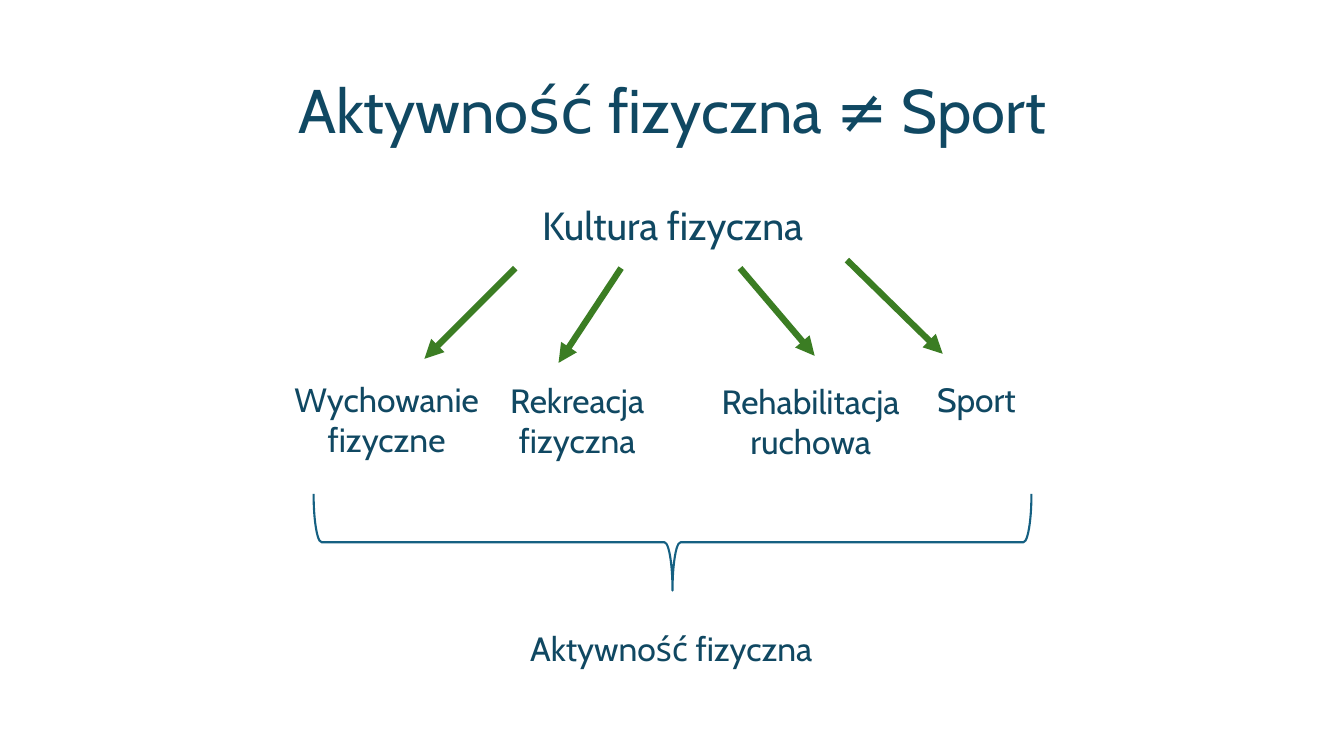
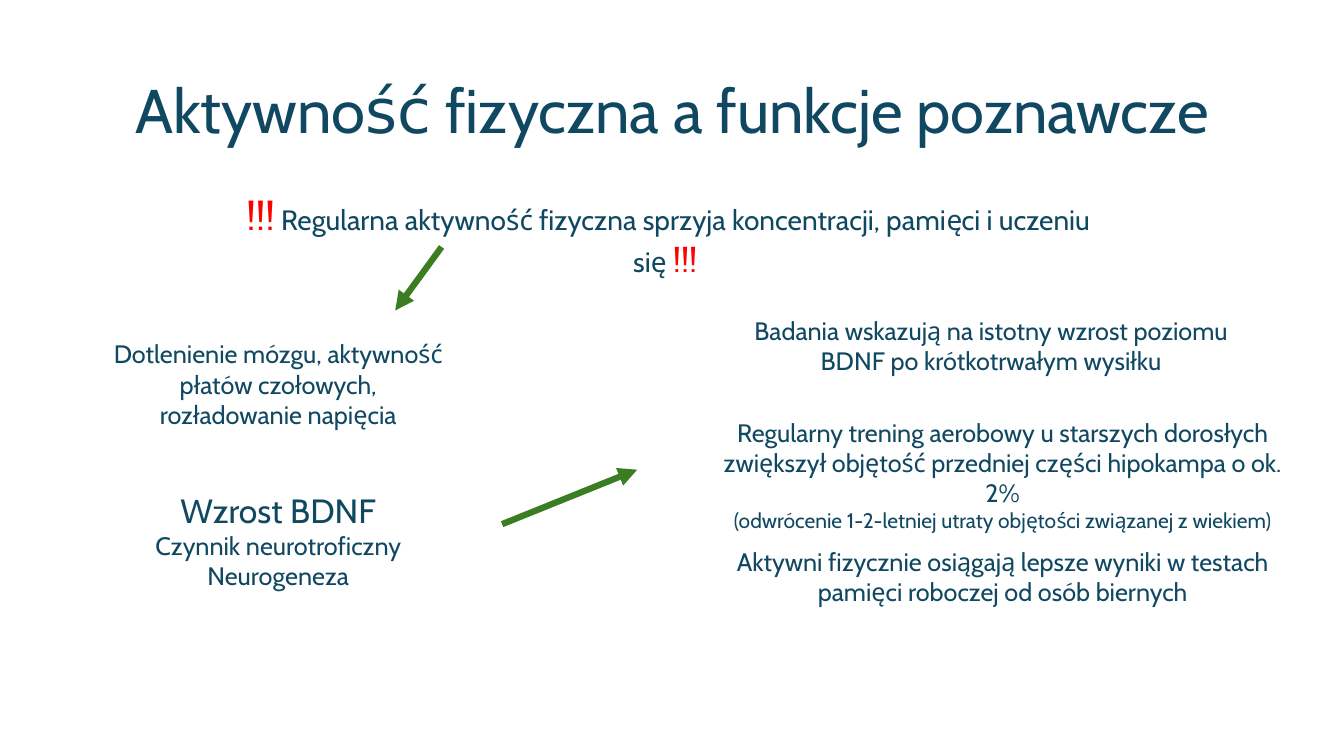
from lxml.etree import SubElement
from pptx import Presentation
from pptx.dml.color import RGBColor
from pptx.enum.shapes import MSO_CONNECTOR, MSO_SHAPE
from pptx.enum.text import MSO_ANCHOR, MSO_AUTO_SIZE, PP_ALIGN
from pptx.oxml.ns import qn
from pptx.util import Inches, Pt

COLORS = {"text": "104862", "arrow": "3B7D23", "brace": "156082", "alert": "FF0000"}
FONT = "Cabin"
TITLE_ONLY, TITLE_AND_BODY = 5, 1
FRAME = {"word_wrap": True, "auto_size": MSO_AUTO_SIZE.SHAPE_TO_FIT_TEXT}
HOLDER_FRAME = {"word_wrap": True, "auto_size": MSO_AUTO_SIZE.NONE}
CENTERED = {"alignment": PP_ALIGN.CENTER}
HOLDER_PARAGRAPH = {**CENTERED, "line_spacing": 0.9, "space_before": Pt(0)}


def set_all(target, values):
    """Set each attribute in values on target."""
    for name, value in values.items():
        setattr(target, name, value)


def color(name):
    """Return the named palette colour."""
    return RGBColor.from_string(COLORS[name])


class Deck:
    """Hold the shared style and the slide being built."""

    def __init__(self):
        """Start a widescreen presentation."""
        self.prs = Presentation()
        set_all(self.prs, {"slide_width": Inches(13.33), "slide_height": Inches(7.5)})
        self.slide = None

    def new_slide(self, layout, title):
        """Add a slide with a centred title."""
        self.slide = self.prs.slides.add_slide(self.prs.slide_layouts[layout])
        self.fill_holder(self.slide.shapes.title, (0.92, 0.4, 11.5, 1.45), title, 44,
                         MSO_ANCHOR.MIDDLE)

    def body(self, text):
        """Fill the body placeholder with one line without a bullet."""
        holder = self.slide.placeholders[1]
        self.fill_holder(holder, (0.92, 2, 11.5, 5.24), text, 28, MSO_ANCHOR.TOP)
        properties = holder.text_frame.paragraphs[0]._p.get_or_add_pPr()
        properties.set("marL", "0")
        properties.set("indent", "0")
        SubElement(properties, qn("a:buNone"))

    def fill_holder(self, holder, box, text, size, anchor):
        """Move a placeholder and fill in its text."""
        set_all(holder, dict(zip(("left", "top", "width", "height"), map(Inches, box))))
        set_all(holder.text_frame, {**HOLDER_FRAME, "vertical_anchor": anchor})
        self.add_runs(holder.text_frame.paragraphs[0], [(text, size)], HOLDER_PARAGRAPH)

    def add_runs(self, paragraph, runs, values):
        """Add runs of text, size and optional colour."""
        set_all(paragraph, values)
        for text, size, *tint in runs:
            if text == "\n":
                paragraph.add_line_break()
                continue
            run = paragraph.add_run()
            run.text = text
            set_all(run.font, {"name": FONT, "size": Pt(size)})
            run.font.color.rgb = color(*tint or ["text"])

    def text(self, box, *paragraphs, align=PP_ALIGN.CENTER):
        """Add a text box with one list of runs per paragraph."""
        frame = self.slide.shapes.add_textbox(*map(Inches, box)).text_frame
        set_all(frame, FRAME)
        for index, runs in enumerate(paragraphs):
            paragraph = frame.add_paragraph() if index else frame.paragraphs[0]
            self.add_runs(paragraph, runs, {"alignment": align})

    def arrow(self, *ends):
        """Draw a thick arrow between two points."""
        arrow = self.slide.shapes.add_connector(MSO_CONNECTOR.STRAIGHT, *map(Inches, ends))
        arrow.line.width = Pt(4.5)
        arrow.line.color.rgb = color("arrow")
        properties = arrow._element.spPr
        SubElement(properties.find(qn("a:ln")), qn("a:tailEnd"), type="triangle")
        SubElement(properties, qn("a:effectLst"))

    def brace(self, box):
        """Draw a brace that opens upwards."""
        brace = self.slide.shapes.add_shape(MSO_SHAPE.RIGHT_BRACE, *map(Inches, box))
        brace.rotation = 90
        brace.shadow.inherit = False
        brace.fill.background()
        brace.line.width = Pt(1.5)
        brace.line.color.rgb = color("brace")


def culture_slide(deck):
    """Build the breakdown of physical culture."""
    deck.new_slide(TITLE_AND_BODY, "Aktywność fizyczna ≠ Sport")
    deck.body("Kultura fizyczna")
    branches = (
        ("Wychowanie fizyczne", (2.8, 3.71, 2.07, 0.91), (5.11, 2.66, 4.21, 3.56)),
        ("Rekreacja fizyczna", (4.69, 3.72, 2.07, 0.91), (6.16, 2.66, 5.54, 3.6)),
        ("Rehabilitacja ruchowa", (6.93, 3.73, 2.22, 0.91), (7.34, 2.66, 8.08, 3.53)),
        ("Sport", (8.65, 3.71, 2.07, 0.5), (8.4, 2.58, 9.35, 3.51)),
    )
    for label, box, ends in branches:
        deck.arrow(*ends)
        deck.text(box, [(label, 24)])
    deck.brace((6.19, 1.82, 0.96, 7.12))
    deck.text((5.16, 6.18, 3.21, 0.5), [("Aktywność fizyczna", 24)], align=PP_ALIGN.LEFT)


def cognition_slide(deck):
    """Build the effects of activity on cognition."""
    deck.new_slide(TITLE_ONLY, "Aktywność fizyczna a funkcje poznawcze")
    deck.text((2, 1.85, 9.26, 0.57), [
        ("!!!", 28, "alert"),
        (" Regularna aktywność fizyczna sprzyja koncentracji, pamięci i uczeniu się ", 20),
        ("!!!", 24, "alert"),
        (" ", 20),
    ])
    deck.text((1.03, 4.81, 3.46, 1.11), [("Wzrost BDNF", 24)],
              [("Czynnik neurotroficzny", 18)], [("Neurogeneza", 18)])
    deck.text((1.03, 3.31, 3.46, 1.01), [
        ("Dotlenienie mózgu, aktywność płatów czołowych, rozładowanie napięcia", 18)])
    deck.arrow(4.38, 2.45, 3.92, 3.08)
    deck.arrow(4.98, 5.2, 6.32, 4.66)
    deck.text((7.36, 3.08, 4.94, 0.71), [
        ("Badania wskazują na istotny wzrost poziomu BDNF po krótkotrwałym wysiłku", 18)])
    deck.text((7.01, 4.09, 5.87, 0.96), [
        ("Regularny trening aerobowy u starszych dorosłych zwiększył objętość "
         "przedniej części hipokampa o ok. 2%", 18),
        ("\n", 18),
        ("(odwrócenie 1-2-letniej utraty objętości związanej z wiekiem)", 15),
    ])
    deck.text((7.01, 5.37, 5.87, 0.71), [
        ("Aktywni fizycznie osiągają lepsze wyniki w testach pamięci roboczej "
         "od osób biernych", 18)])


def main():
    """Build and save the presentation."""
    deck = Deck()
    culture_slide(deck)
    cognition_slide(deck)
    deck.prs.save("out.pptx")


if __name__ == "__main__":
    main()
